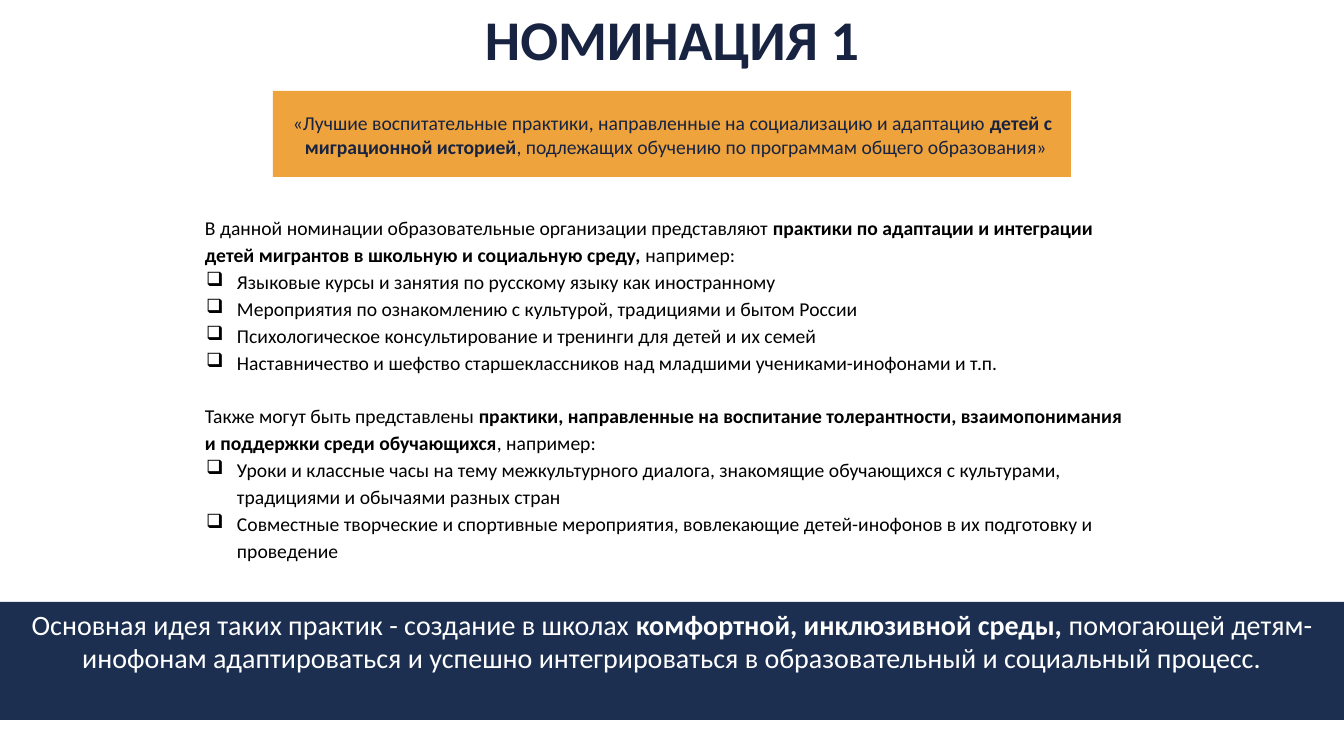
from pptx import Presentation
from pptx.dml.color import RGBColor
from pptx.enum.shapes import MSO_SHAPE
from pptx.enum.text import PP_ALIGN
from pptx.oxml.ns import qn
from pptx.util import Pt
from lxml import etree

PX = 12192000 / 1344
LEFT, CENTER = PP_ALIGN.LEFT, PP_ALIGN.CENTER
RECT = MSO_SHAPE.RECTANGLE
COLORS = {"navy": "1C2F51", "ink": "172340", "gold": "EFA33C",
          "black": "000000", "white": "FFFFFF"}


def px(n):
    return round(n * PX)


def add_text(tf, text, size=14, color="black", align=LEFT, before=0,
             spacing=1.0, margin=0, indent=0, bullet=None, first=False):
    """Add a paragraph; ** switches bold and a newline breaks the line."""
    p = tf.paragraphs[0] if first else tf.add_paragraph()
    p.alignment, p.line_spacing, p.space_before = align, spacing, Pt(before)
    pPr = p._p.get_or_add_pPr()
    pPr.set("marL", str(px(margin)))
    pPr.set("indent", str(px(indent)))
    if bullet:
        etree.SubElement(pPr, qn("a:buChar")).set("char", bullet)
    for i, part in enumerate(text.split("**")):
        for j, line in enumerate(part.split("\n")):
            if j:
                p.add_line_break()
            if line:
                r = p.add_run()
                r.text = line
                r.font.name, r.font.size = "Calibri", Pt(size)
                r.font.bold = i % 2 == 1
                r.font.color.rgb = RGBColor.from_string(COLORS[color])


prs = Presentation()
prs.slide_width, prs.slide_height = px(1344), px(756)
s = prs.slides.add_slide(prs.slide_layouts[6])

# Bands: nomination name and main idea
bands = []
for box, fill in [((273, 91, 798, 86), "gold"), ((0, 602, 1344, 118), "navy")]:
    sp = s.shapes.add_shape(RECT, *map(px, box))
    sp.shadow.inherit = False
    sp.fill.solid()
    sp.fill.fore_color.rgb = RGBColor.from_string(COLORS[fill])
    sp.line.fill.background()
    bands.append(sp)
nomination = bands[0]

# Text boxes
title, body, idea = [s.shapes.add_textbox(*map(px, box)) for box in
                     [(484, 4, 380, 70), (204, 211, 930, 352), (24, 605, 1296, 71)]]

# Shared frame settings
for sp, top in [(title, 1), (nomination, 20), (body, 2), (idea, 2)]:
    tf = sp.text_frame
    tf.word_wrap = True
    tf.vertical_anchor = 1
    tf.margin_left = tf.margin_right = tf.margin_bottom = 0
    tf.margin_top = px(top)

# Title and nomination name
add_text(title.text_frame, "**НОМИНАЦИЯ 1**", size=40, color="ink", margin=1, first=True)
add_text(nomination.text_frame,
         "«Лучшие воспитательные практики, направленные на социализацию и адаптацию **детей с\n"
         "миграционной историей**, подлежащих обучению по программам общего образования»",
         color="ink", margin=32, indent=-12, first=True)

# Two groups of practices: intro, space before it, bullets, their spacing
GROUPS = [
    ("В данной номинации образовательные организации представляют "
     "**практики по адаптации и интеграции\n"
     "детей мигрантов в школьную и социальную среду, **например:", 0,
     ["Языковые курсы и занятия по русскому языку как иностранному",
      "Мероприятия по ознакомлению с культурой, традициями и бытом России",
      "Психологическое консультирование и тренинги для детей и их семей",
      "Наставничество и шефство старшеклассников над младшими учениками-инофонами и т.п."],
     {"before": 2.4}),
    ("Также могут быть представлены "
     "**практики, направленные на воспитание толерантности, взаимопонимания\n"
     "и поддержки среди обучающихся**, например:", 19.2,
     ["Уроки и классные часы на тему межкультурного диалога, знакомящие обучающихся с культурами,\n"
      "традициями и обычаями разных стран",
      "Совместные творческие и спортивные мероприятия, вовлекающие детей-инофонов в их подготовку и\n"
      "проведение"],
     {"spacing": 1.14}),
]
for n, (intro, before, practices, fmt) in enumerate(GROUPS):
    add_text(body.text_frame, intro, before=before, spacing=1.14, margin=1, first=n == 0)
    for practice in practices:
        add_text(body.text_frame, practice, margin=33, indent=-31, bullet="❑", **fmt)

# Main idea
add_text(idea.text_frame,
         "Основная идея таких практик - создание в школах "
         "**комфортной, инклюзивной среды, **помогающей детям-",
         size=20, color="white", align=CENTER, first=True)
add_text(idea.text_frame,
         "инофонам адаптироваться и успешно интегрироваться в образовательный и социальный процесс.",
         size=20, color="white", align=CENTER)

prs.save("out.pptx")
